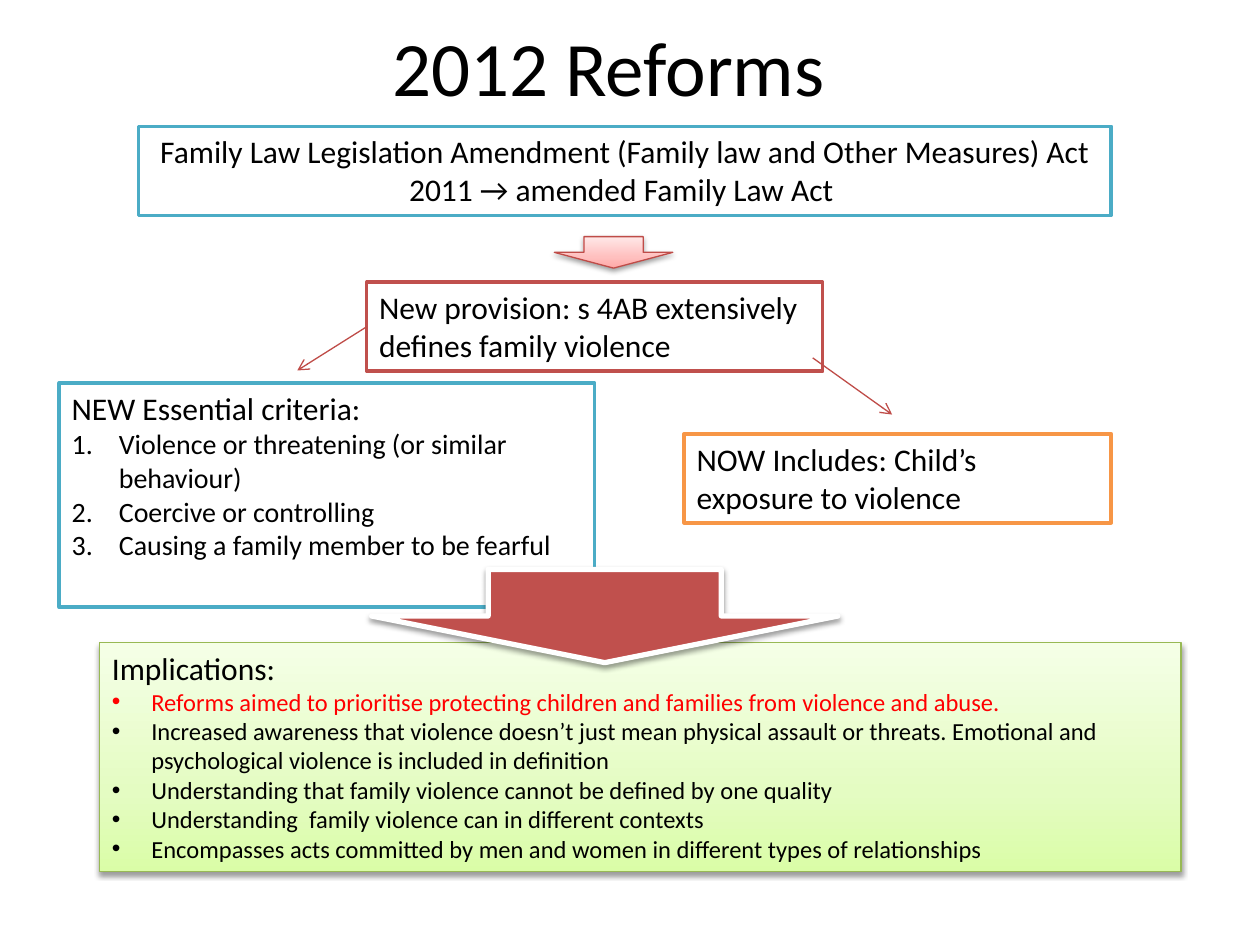
from copy import deepcopy
from dataclasses import dataclass

from lxml import etree
from pptx import Presentation
from pptx.dml.color import RGBColor
from pptx.enum import shapes, text
from pptx.oxml import ns
from pptx.util import Pt


@dataclass(frozen=True)
class Theme:
    font: str = "Calibri"
    black: str = "000000"
    white: str = "FFFFFF"
    teal: str = "4BACC6"
    red: str = "C0504D"
    edge: str = "BF4C48"
    orange: str = "F79646"
    green: str = "98B955"
    alert: str = "FF0000"
    lime: tuple = ((0, "DAFDA7"), (35, "E4FCC2"), (100, "F5FFE7"))
    pink: tuple = ((0, "FFA6A5"), (35, "FFC0BF"), (100, "FFE7E7"))
    title: int = 44
    head: int = 18
    item: int = 16
    note: int = 14


def add(parent, tag, **attrs):
    return etree.SubElement(parent, ns.qn(tag), attrs)


class Deck:
    def __init__(self, theme):
        self.theme = theme
        self.prs = Presentation()
        self.prs.slide_width, self.prs.slide_height = Pt(720), Pt(540)
        self.slide = self.prs.slides.add_slide(self.prs.slide_layouts[5])

    def place(self, shape, area):
        shape.left, shape.top, shape.width, shape.height = map(Pt, area)

    def style(self, para, size, color=None, align=text.PP_ALIGN.LEFT):
        para.alignment = align
        para.font.name = self.theme.font
        para.font.size = Pt(size)
        para.font.color.rgb = RGBColor.from_string(color or self.theme.black)

    def title(self, words, area):
        shape = self.slide.shapes.title
        self.place(shape, area)
        frame = shape.text_frame
        frame.text = words
        frame.vertical_anchor = text.MSO_ANCHOR.MIDDLE
        self.style(frame.paragraphs[0], self.theme.title, align=text.PP_ALIGN.CENTER)

    def paint(self, fill, color):
        if isinstance(color, str):
            fill.solid()
            fill.fore_color.rgb = RGBColor.from_string(color)
            return
        fill.gradient()
        fill.gradient_angle = 90
        stops = fill.gradient_stops._gsLst
        base = deepcopy(stops[0])
        for stop in list(stops):
            stops.remove(stop)
        for spot, tone in color:
            stop = deepcopy(base)
            stop.set("pos", str(spot * 1000))
            for child in list(stop):
                stop.remove(child)
            add(stop, "a:srgbClr", val=tone)
            stops.append(stop)

    def shape(self, kind, area, fill, line, width, shade=False):
        shape = self.slide.shapes.add_shape(kind, *map(Pt, area))
        self.paint(shape.fill, fill)
        shape.line.color.rgb = RGBColor.from_string(line)
        shape.line.width = Pt(width)
        shape.shadow.inherit = False
        if shade:
            effects = shape._element.spPr.find(ns.qn("a:effectLst"))
            glow = add(effects, "a:outerShdw", blurRad=str(Pt(3.1)),
                       dist=str(Pt(1.6)), dir="5400000", rotWithShape="0")
            tone = add(glow, "a:srgbClr", val=self.theme.black)
            add(tone, "a:alpha", val="38000")
        return shape

    def box(self, head, area, line, fill=None, width=2, shade=False,
            align=text.PP_ALIGN.LEFT):
        shape = self.shape(shapes.MSO_SHAPE.RECTANGLE, area,
                           fill or self.theme.white, line, width, shade)
        frame = shape.text_frame
        frame.word_wrap = True
        frame.vertical_anchor = text.MSO_ANCHOR.TOP
        frame.text = head
        self.style(frame.paragraphs[0], self.theme.head, align=align)
        return shape

    def items(self, shape, rows, size, indent, number=False, alert=None):
        for index, words in enumerate(rows):
            para = shape.text_frame.add_paragraph()
            para.text = words
            color = self.theme.alert if index == alert else self.theme.black
            self.style(para, size, color)
            props = para._p.get_or_add_pPr()
            props.set("marL", str(Pt(indent)))
            props.set("indent", str(-Pt(indent)))
            mark = ("a:buAutoNum", {"type": "arabicPeriod"})
            if not number:
                add(props, "a:buFont", typeface="Arial")
                mark = ("a:buChar", {"char": "•"})
            bullet = etree.Element(ns.qn(mark[0]), mark[1])
            props.append(bullet)

    def arrow(self, area, fill, line, width):
        self.shape(shapes.MSO_SHAPE.DOWN_ARROW, area, fill, line, width, True)

    def link(self, start, end, source=None, side=1):
        line = self.slide.shapes.add_connector(
            shapes.MSO_CONNECTOR.STRAIGHT, *map(Pt, start + end))
        if source is not None:
            line.begin_connect(source, side)
        line.line.color.rgb = RGBColor.from_string(self.theme.edge)
        line.line.width = Pt(0.75)
        add(line.line._get_or_add_ln(), "a:tailEnd", type="arrow")
        add(line._element.spPr, "a:effectLst")


def main():
    look = Theme()
    deck = Deck(look)
    deck.title("2012 Reforms ", (28.8, -7.2, 648, 90))

    rules = deck.box("NEW Essential criteria:", (33.84, 218.8, 306, 128.2), look.teal)
    deck.items(rules, [
        "Violence or threatening (or similar behaviour)",
        "Coercive or controlling",
        "Causing a family member to be fearful",
    ], look.item, 27, number=True)

    deck.box("Family Law Legislation Amendment (Family law and Other Measures) Act "
             "2011 → amended Family Law Act ", (79.2, 72.2, 555.8, 50.9),
             look.teal, align=text.PP_ALIGN.CENTER)
    clause = deck.box("New provision: s 4AB extensively defines family violence",
                      (209.5, 161.3, 260.6, 50.9), look.red)
    deck.box("NOW Includes: Child’s exposure to violence",
             (391, 247.9, 244, 50.9), look.orange)

    goals = deck.box("Implications:", (56.9, 367.2, 618, 131),
                     look.green, look.lime, 0.75, True)
    deck.items(goals, [
        "Reforms aimed to prioritise protecting children and families from "
        "violence and abuse.",
        "Increased awareness that violence doesn’t just mean physical assault or "
        "threats. Emotional and psychological violence is included in definition",
        "Understanding that family violence cannot be defined by one quality",
        "Understanding  family violence can in different contexts",
        "Encompasses acts committed by men and women in different types of "
        "relationships",
    ], look.note, 22.5, alert=0)

    deck.arrow((316.8, 135.2, 67.7, 18), look.pink, look.edge, 0.75)
    deck.link((209.5, 186.75), (169.9, 211.7), clause)
    deck.link((464.4, 204.5), (509.8, 236.9))
    deck.arrow((212.4, 325.4, 266.4, 53.3), look.red, look.white, 3)

    deck.prs.save("out.pptx")


if __name__ == "__main__":
    main()
